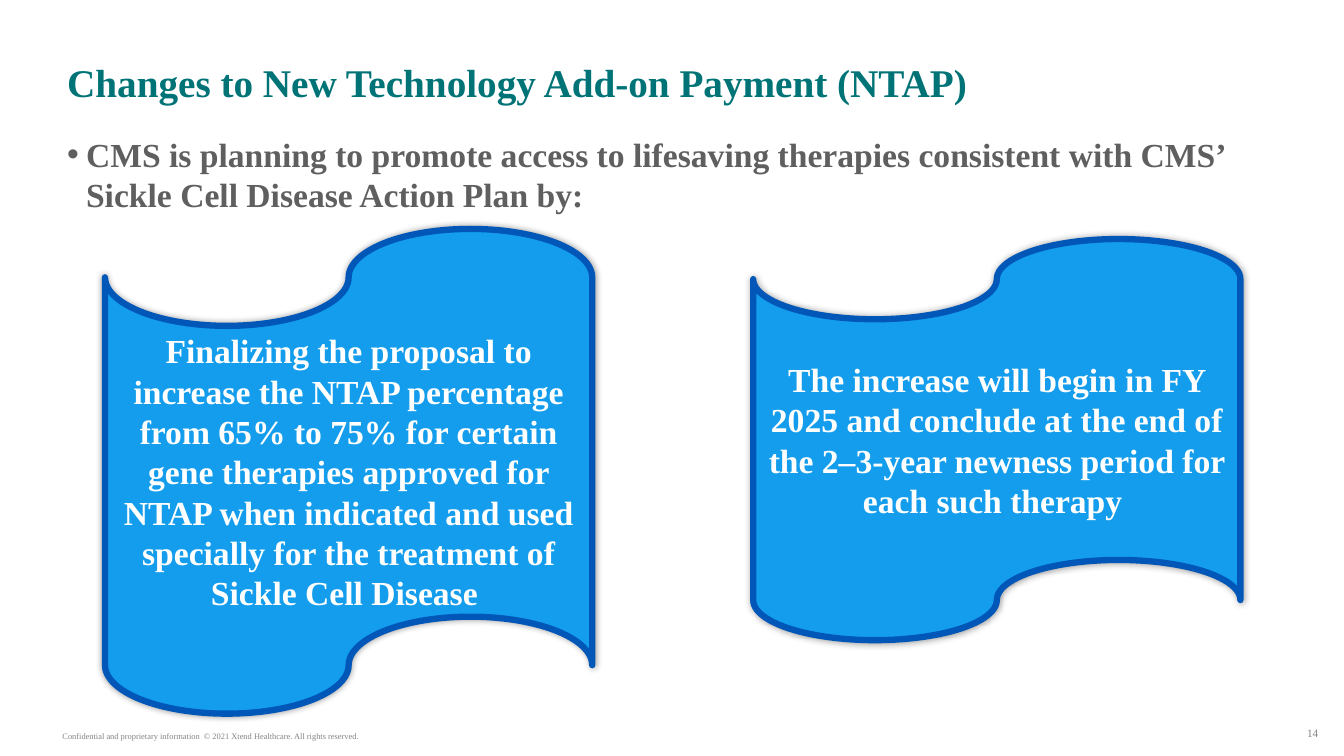
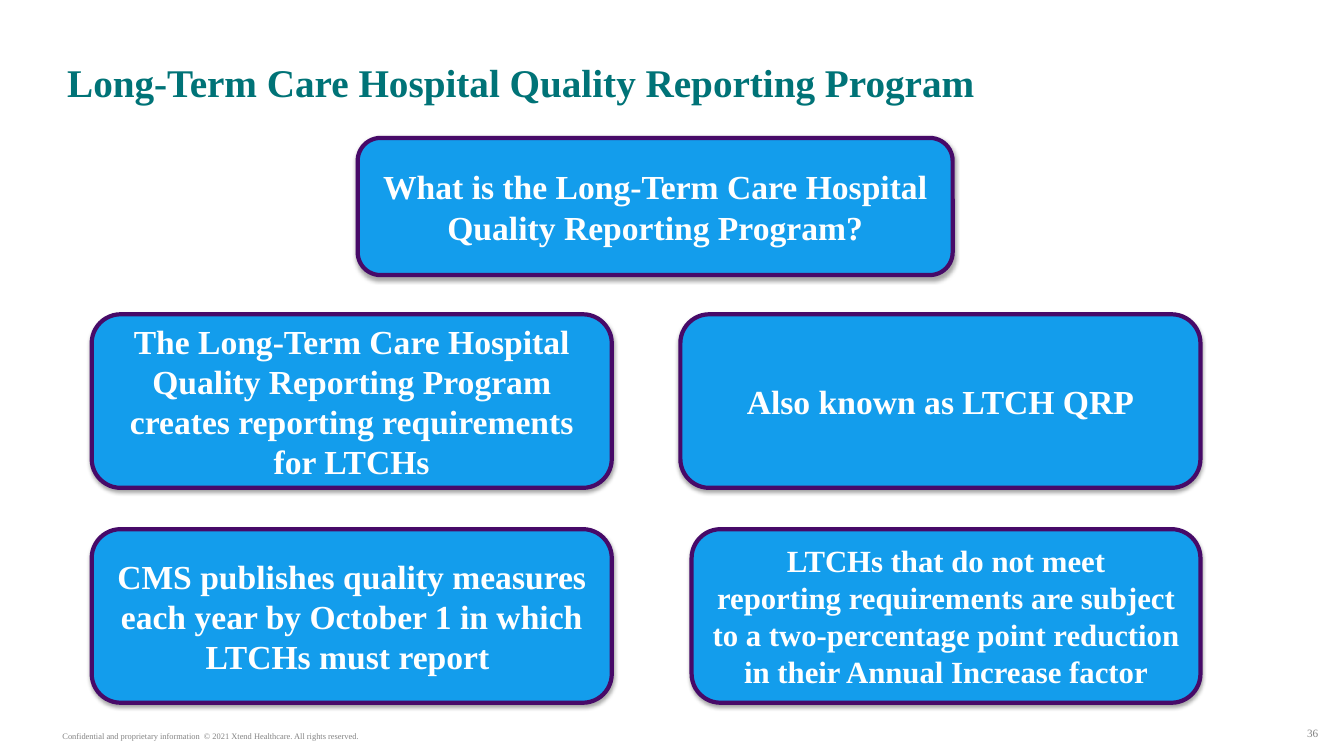
from dataclasses import dataclass

from lxml.etree import SubElement
from pptx import Presentation
from pptx.dml.color import RGBColor
from pptx.enum.shapes import MSO_SHAPE
from pptx.enum.text import MSO_ANCHOR, MSO_AUTO_SIZE, PP_ALIGN
from pptx.oxml.ns import qn
from pptx.util import Pt

FONT = "Times New Roman"
TEAL, GRAY, FOOTER_GRAY = "007377", "5F5F5F", "838383"
WHITE, SKY, BLUE, PURPLE = "FFFFFF", "139DEC", "0057B8", "470A68"
FOOTER = "Confidential and proprietary information  © 2021 Xtend Healthcare. All rights reserved."


@dataclass(frozen=True)
class Box:
    left: float
    top: float
    width: float
    height: float


@dataclass(frozen=True)
class PanelStyle:
    geometry: MSO_SHAPE
    line: str
    weight: float
    shadow_alpha: int
    blur: float
    distance: float
    angle: int


@dataclass(frozen=True)
class Panel:
    box: Box
    text: str
    size: float = 24


TAPE = PanelStyle(MSO_SHAPE.FLOWCHART_PUNCHED_TAPE, BLUE, 4.5, 40, 5, 0, 0)
CARD = PanelStyle(MSO_SHAPE.FLOWCHART_ALTERNATE_PROCESS, PURPLE, 3, 35, 3.1, 1.8, 90)

TITLE_BOX = Box(48, 38, 864, 47.5)
BODY_BOX = Box(48, 92, 864, 63.5)
FOOTER_BOX = Box(37.5, 518.5, 240, 14.5)
NUMBER_BOX = Box(887, 515.5, 54.75, 19.5)

CARD_LEFT, CARD_RIGHT = 65.5, 857.5
CARD_W, CARD_H = 371.5, 124
NARROW_W = 363.5
ROW_1, ROW_2 = 224.5, 378

TAPES = [
    Panel(Box(75, 163.5, 348, 346.25),
          "Finalizing the proposal to increase the NTAP percentage from 65% to 75% for certain "
          "gene therapies approved for NTAP when indicated and used specially for the treatment "
          "of Sickle Cell Disease "),
    Panel(Box(538, 170.75, 348, 286.5),
          "The increase will begin in FY 2025 and conclude at the end of the 2–3-year newness "
          "period for each such therapy "),
]
CARDS = [
    Panel(Box(255.5, 98.5, 425, 98),
          "What is the Long-Term Care Hospital Quality Reporting Program?"),
    Panel(Box(CARD_LEFT, ROW_1, CARD_W, CARD_H),
          "The Long-Term Care Hospital Quality Reporting Program creates reporting requirements "
          "for LTCHs"),
    Panel(Box(CARD_RIGHT - CARD_W, ROW_1, CARD_W, CARD_H), "Also known as LTCH QRP"),
    Panel(Box(CARD_LEFT, ROW_2, CARD_W, CARD_H),
          "CMS publishes quality measures each year by October 1 in which LTCHs must report "),
    Panel(Box(CARD_RIGHT - NARROW_W, ROW_2, NARROW_W, CARD_H),
          "LTCHs that do not meet\nreporting requirements are subject to a two-percentage point "
          "reduction in their Annual Increase factor", 22),
]


def rgb(value: str) -> RGBColor:
    return RGBColor.from_string(value)


def place(sp, box: Box) -> None:
    sp.left, sp.top = Pt(box.left), Pt(box.top)
    sp.width, sp.height = Pt(box.width), Pt(box.height)


def write(sp, text: str, size: float, color: str, bold: bool = True,
          align=PP_ALIGN.LEFT, anchor=MSO_ANCHOR.TOP, side_inset: float = 0) -> None:
    tf = sp.text_frame
    tf.word_wrap = True
    tf.auto_size = MSO_AUTO_SIZE.NONE
    tf.vertical_anchor = anchor
    tf.margin_left = tf.margin_right = Pt(side_inset)
    tf.margin_top = tf.margin_bottom = Pt(3.6)
    tf.text = text
    for p in tf.paragraphs:
        p.alignment = align
        p.space_before = Pt(0)
        for r in p.runs:
            r.font.name, r.font.size, r.font.bold = FONT, Pt(size), bold
            r.font.color.rgb = rgb(color)


def add_label(slide, box: Box, text: str, size: float, **options) -> None:
    sp = slide.shapes.add_textbox(Pt(box.left), Pt(box.top), Pt(box.width), Pt(box.height))
    write(sp, text, size, FOOTER_GRAY, bold=False, **options)


def add_slide(prs, layout: int, title: str, number: int):
    """Add a slide with the shared title, footer and page number."""
    slide = prs.slides.add_slide(prs.slide_layouts[layout])
    place(slide.shapes.title, TITLE_BOX)
    write(slide.shapes.title, title, 28, TEAL)
    add_label(slide, FOOTER_BOX, FOOTER, 6, side_inset=7.2)
    add_label(slide, NUMBER_BOX, str(number), 8, align=PP_ALIGN.RIGHT)
    return slide


def fill_body(slide, text: str) -> None:
    body = slide.placeholders[1]
    place(body, BODY_BOX)
    write(body, text, 24, GRAY)
    for p in body.text_frame.paragraphs:
        pPr = p._p.get_or_add_pPr()
        pPr.set("marL", str(Pt(13.5)))
        pPr.set("indent", str(-Pt(13.5)))
        SubElement(pPr, qn("a:buChar"), char="•")


def add_shadow(sp, style: PanelStyle) -> None:
    sp.shadow.inherit = False
    effects = sp._element.spPr.find(qn("a:effectLst"))
    shadow = SubElement(effects, qn("a:outerShdw"), blurRad=str(Pt(style.blur)),
                        dist=str(Pt(style.distance)), dir=str(style.angle * 60000),
                        rotWithShape="0")
    color = SubElement(shadow, qn("a:srgbClr"), val="000000")
    SubElement(color, qn("a:alpha"), val=str(style.shadow_alpha * 1000))


def add_panel(slide, panel: Panel, style: PanelStyle) -> None:
    box = panel.box
    sp = slide.shapes.add_shape(style.geometry, Pt(box.left), Pt(box.top),
                                Pt(box.width), Pt(box.height))
    sp.fill.solid()
    sp.fill.fore_color.rgb = rgb(SKY)
    sp.line.color.rgb = rgb(style.line)
    sp.line.width = Pt(style.weight)
    SubElement(sp.line._get_or_add_ln(), qn("a:round"))
    add_shadow(sp, style)
    write(sp, panel.text, panel.size, WHITE, align=PP_ALIGN.CENTER,
          anchor=MSO_ANCHOR.MIDDLE, side_inset=7.2)


def main() -> None:
    prs = Presentation()
    prs.slide_width, prs.slide_height = Pt(960), Pt(540)

    slide = add_slide(prs, 1, "Changes to New Technology Add-on Payment (NTAP)", 14)
    fill_body(slide, "CMS is planning to promote access to lifesaving therapies consistent with "
                     "CMS’ Sickle Cell Disease Action Plan by:")
    for tape in TAPES:
        add_panel(slide, tape, TAPE)

    slide = add_slide(prs, 5, "Long-Term Care Hospital Quality Reporting Program", 36)
    for card in CARDS:
        add_panel(slide, card, CARD)

    prs.save("out.pptx")


if __name__ == "__main__":
    main()
